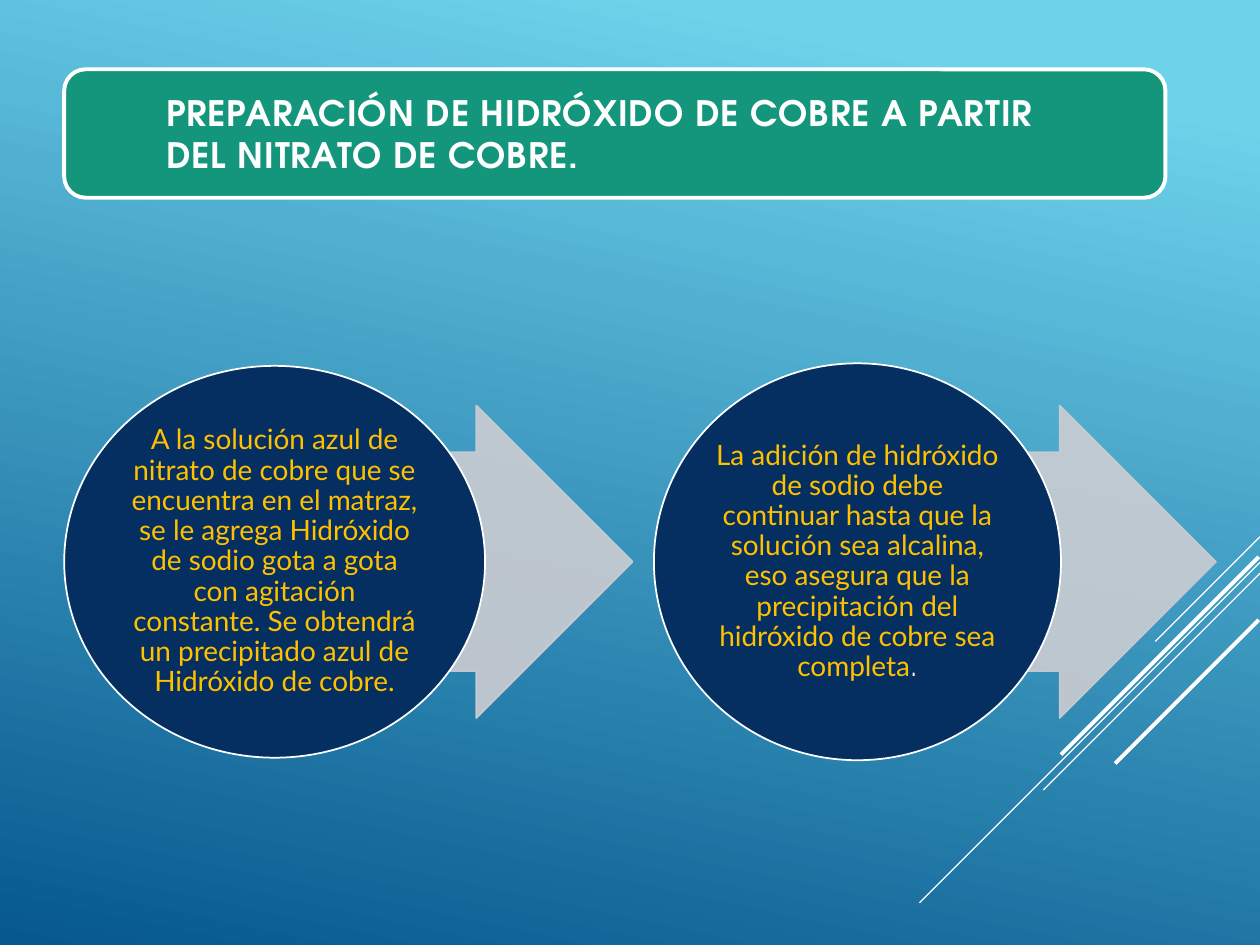
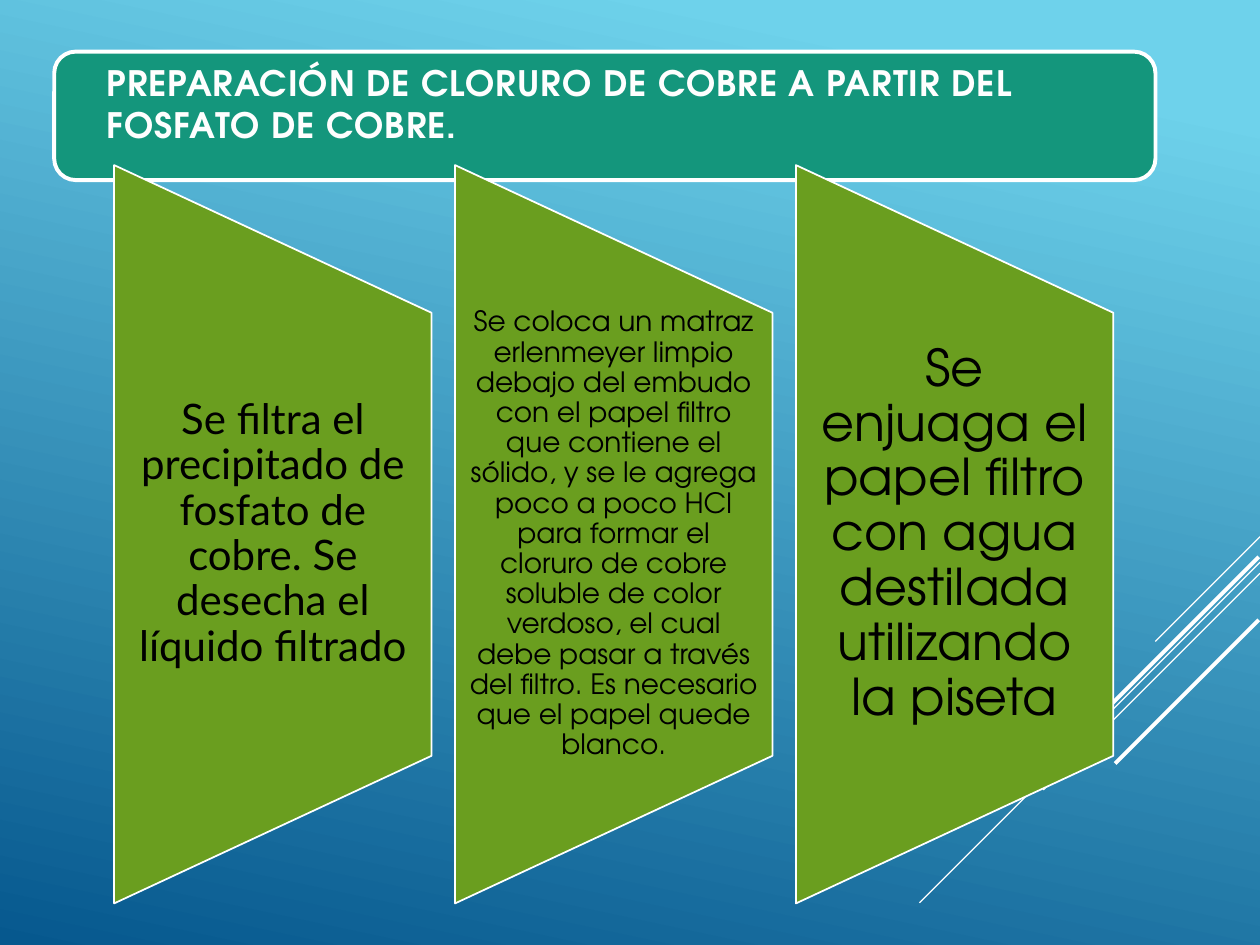
from lxml import etree
from pptx import Presentation
from pptx import util as u
from pptx.dml.color import RGBColor
from pptx.enum import shapes, text
from pptx.oxml.ns import qn

Pt = u.Pt
SHAPE = shapes.MSO_SHAPE
SANS, GEOMETRIC = "Lato", "TeX Gyre Adventor"
COLORS = {
    "sky": "6ED2EB", "deep": "06588E", "white": "FFFFFF", "title": "FEFEFE",
    "band": "14967C", "navy": "052F61", "arrow": "CCCDD2", "gold": "FFC000",
    "green": "6A9E1F", "black": "000000",
}

# Diagonal strokes at 45 degrees: right end x, y, run to the left, width
STROKES = [
    (720, 306.7, 59.8, 0.75),
    (720, 321.3, 194.6, 0.75),
    (720, 327.6, 123.8, 0.75),
    (719.3, 318.2, 113, 2.25),
    (719.3, 354.2, 82.1, 2.25),
]
BAND_SIZE = (629.3, 73.4)

# Slide 1: circles and their arrows share one centre line
CENTER_Y = 321
ARROW_LEFT, ARROW_PITCH, ARROW_SIZE = 157, 333.4, (204.5, 178.6)
CIRCLES = [
    (36.7, 240.5, 223.9, [
        ("A la solución azul de nitrato de cobre que se encuentra en el matraz, "
         "se le agrega Hidróxido de sodio gota a gota con agitación constante. "
         "Se obtendrá un precipitado azul de Hidróxido de cobre.", SANS, 16, "gold")]),
    (373.7, 232.6, 226.8, [
        ("La adición de hidróxido de sodio debe continuar hasta que la solución "
         "sea alcalina, eso asegura que la precipitación del hidróxido de cobre "
         "sea completa", SANS, 16, "gold"),
        (".", GEOMETRIC, 15, "white")]),
]

# Slide 2: equal panels, each with its font, size and side inset
PANEL_X, PANEL_PITCH, PANEL_Y = 155.9, 194.8, 305.3
PANEL_W, PANEL_H, PANEL_TEXT_H = 181.4, 421.9, 253.4
PANELS = [
    ("Se filtra el precipitado de fosfato de cobre. Se desecha el líquido filtrado",
     SANS, 24, 12.2),
    ("Se coloca un matraz erlenmeyer limpio debajo del embudo con el papel filtro "
     "que contiene el sólido, y se le agrega poco a poco HCl para formar el cloruro "
     "de cobre soluble de color verdoso, el cual debe pasar a través del filtro. "
     "Es necesario que el papel quede blanco.", GEOMETRIC, 16, 7.9),
    ("Se enjuaga el papel filtro con agua destilada utilizando la piseta",
     GEOMETRIC, 29, 14.4),
]


def rgb(key):
    return RGBColor.from_string(COLORS[key])


def apply(obj, **values):
    for name, value in values.items():
        setattr(obj, name, value)


def add_node(parent, tag, **attrs):
    return etree.SubElement(parent, qn(tag), {k: str(v) for k, v in attrs.items()})


def add_box(s, kind, x, y, w, h, fill, line, width):
    sp = s.shapes.add_shape(kind, Pt(x), Pt(y), Pt(w), Pt(h))
    sp.shadow.inherit = False
    sp.fill.solid()
    sp.fill.fore_color.rgb = rgb(fill)
    sp.line.color.rgb = rgb(line)
    sp.line.width = Pt(width)
    return sp


def add_run(p, content, font, size, color, bold=False):
    r = p.add_run()
    r.text = content
    apply(r.font, name=font, size=Pt(size), bold=bold)
    r.font.color.rgb = rgb(color)
    return r


def write_centered(sp, runs, side, top):
    tf = sp.text_frame
    apply(tf, word_wrap=True, vertical_anchor=text.MSO_ANCHOR.MIDDLE,
          margin_left=Pt(side), margin_right=Pt(side),
          margin_top=Pt(top), margin_bottom=Pt(top))
    p = tf.paragraphs[0]
    apply(p, alignment=text.PP_ALIGN.CENTER, line_spacing=0.9)
    for run in runs:
        add_run(p, *run)


def add_base_slide(prs):
    """Blank slide with the gradient background and the diagonal strokes."""
    s = prs.slides.add_slide(prs.slide_layouts[6])
    fill = s.background.fill
    fill.gradient()
    fill.gradient_angle = 258
    for stop, (position, color) in zip(fill.gradient_stops, [(0.1, "sky"), (1, "deep")]):
        stop.position = position
        stop.color.rgb = rgb(color)
    for x, y, run, width in STROKES:
        line = s.shapes.add_connector(shapes.MSO_CONNECTOR.STRAIGHT,
                                      Pt(x), Pt(y), Pt(x - run), Pt(y + run))
        line.line.color.rgb = rgb("white")
        line.line.width = Pt(width)
        add_node(line._element.spPr, "a:effectLst")
    return s


def add_title(s, band_at, text_at, width, content):
    add_box(s, SHAPE.ROUNDED_RECTANGLE, *band_at, *BAND_SIZE, "band", "white", 2.25)
    tf = s.shapes.add_textbox(*map(Pt, (*text_at, width, 55.4))).text_frame
    apply(tf, word_wrap=True, auto_size=text.MSO_AUTO_SIZE.SHAPE_TO_FIT_TEXT)
    r = add_run(tf.paragraphs[0], content, GEOMETRIC, 20, "title", bold=True)

    # Letter spacing, outline and soft shadow
    rpr = r.font._element
    rpr.set("spc", "50")
    outline = add_node(rpr, "a:ln", w=Pt(0.75))
    add_node(add_node(outline, "a:solidFill"), "a:srgbClr", val=COLORS["navy"])
    effects = add_node(rpr, "a:effectLst")
    shadow = add_node(effects, "a:outerShdw", blurRad=38100, dist=22860, dir=2700000)
    add_node(add_node(shadow, "a:srgbClr", val=COLORS["black"]), "a:alpha", val=40000)
    rpr.insert(0, outline)
    rpr.insert(2, effects)


def add_arrow(s, x):
    w, h = ARROW_SIZE
    sp = add_box(s, SHAPE.RIGHT_ARROW, x, CENTER_Y - h / 2, w, h, "arrow", "arrow", 1)
    sp.adjustments[0], sp.adjustments[1] = 0.7, 0.5
    for color in sp._element.spPr.iter(qn("a:srgbClr")):
        add_node(color, "a:alpha", val=90000)


def add_circle(s, x, w, h, runs):
    sp = add_box(s, SHAPE.OVAL, x, CENTER_Y - h / 2, w, h, "navy", "white", 1)
    write_centered(sp, runs, 0.7, 0.7)


def add_panel(s, cx, content, font, size, side):
    sp = add_box(s, SHAPE.FLOWCHART_MANUAL_OPERATION, cx - PANEL_H / 2,
                 PANEL_Y - PANEL_W / 2, PANEL_H, PANEL_W, "green", "white", 1)
    sp.rotation = 270
    box = s.shapes.add_textbox(Pt(cx - PANEL_W / 2), Pt(PANEL_Y - PANEL_TEXT_H / 2),
                               Pt(PANEL_W), Pt(PANEL_TEXT_H))
    write_centered(box, [(content, font, size, "black")], side, 0)


def main():
    prs = Presentation()
    apply(prs, slide_width=Pt(720), slide_height=Pt(540))

    # Copper hydroxide
    s = add_base_slide(prs)
    add_title(s, (36.7, 39.6), (87.8, 49), 538.6,
              "PREPARACIÓN DE HIDRÓXIDO DE COBRE A PARTIR DEL NITRATO DE COBRE.")
    for i, circle in enumerate(CIRCLES):
        add_arrow(s, ARROW_LEFT + i * ARROW_PITCH)
        add_circle(s, *circle)

    # Copper chloride
    s = add_base_slide(prs)
    add_title(s, (31, 29.5), (54, 31.7), 532.8,
              "PREPARACIÓN DE CLORURO DE COBRE A PARTIR DEL FOSFATO DE COBRE.")
    for i, panel in enumerate(PANELS):
        add_panel(s, PANEL_X + i * PANEL_PITCH, *panel)

    prs.save("out.pptx")


if __name__ == "__main__":
    main()
